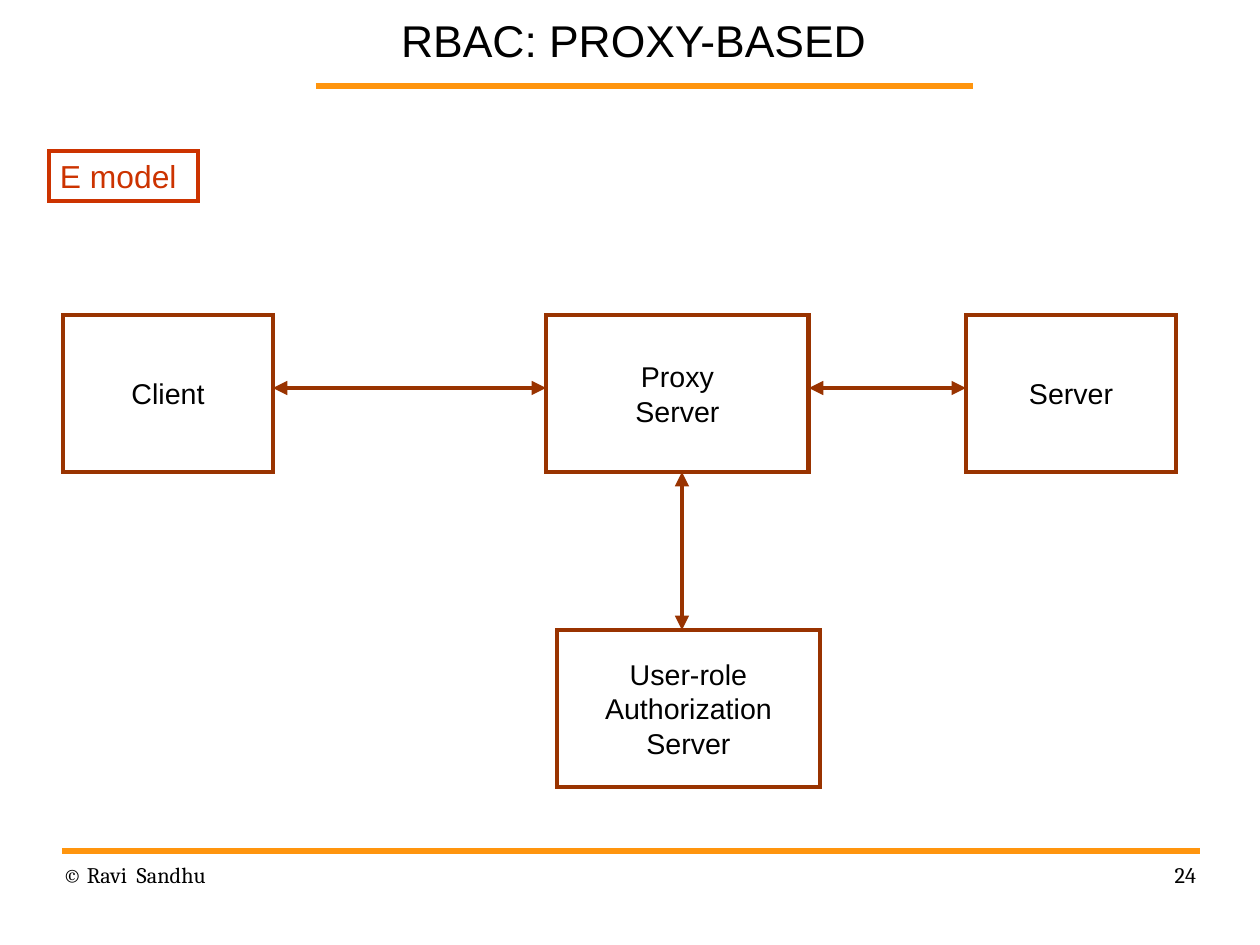
from pptx import Presentation
from pptx.dml.color import RGBColor
from pptx.enum.shapes import MSO_CONNECTOR, MSO_SHAPE
from pptx.enum.text import MSO_ANCHOR, MSO_AUTO_SIZE, PP_ALIGN
from pptx.oxml.ns import qn
from pptx.util import Emu, Pt
from lxml import etree

RECTANGLE = MSO_SHAPE.RECTANGLE
STRAIGHT = MSO_CONNECTOR.STRAIGHT
LEFT, CENTER, RIGHT = PP_ALIGN.LEFT, PP_ALIGN.CENTER, PP_ALIGN.RIGHT
TOP, MIDDLE, BOTTOM = MSO_ANCHOR.TOP, MSO_ANCHOR.MIDDLE, MSO_ANCHOR.BOTTOM
FIT_SHAPE = MSO_AUTO_SIZE.SHAPE_TO_FIT_TEXT

# Content: all lengths in px
EMU_PER_PX = 8000
SLIDE = (1260, 945)
TITLE = ("RBAC: PROXY-BASED", (350, 0, 567, 72))
RULES = [(316, 86, 973, 86), (62, 851, 1200, 851)]
FOOTERS = [
    ("© Ravi  Sandhu", (63, 861, 294, 65), LEFT),
    ("24", (902, 861, 294, 65), RIGHT),
]
MODEL_LABEL = ("E model", (49, 151, 149, 50))
NODE_HEIGHT = 157
NODES = {  # name: (lines, left, top, width)
    "client": (["Client"], 63, 315, 210),
    "proxy": (["Proxy", "Server"], 546, 315, 263),
    "server": (["Server"], 966, 315, 210),
    "authorization": (["User-role", "Authorization", "Server"], 557, 630, 263),
}
ROW_LINKS = [("client", "proxy"), ("proxy", "server")]
COLUMN_LINKS = [("proxy", "authorization")]
ROW_LINK_Y = 388
COLUMN_LINK_X = 682


class Theme:
    text = RGBColor(0x00, 0x00, 0x00)
    rule = RGBColor(0xFF, 0x95, 0x0E)
    label = RGBColor(0xCC, 0x33, 0x00)
    node = RGBColor(0x99, 0x33, 0x00)
    body_font, footer_font = "Arial", "Cambria"
    title_size, label_size, node_size, footer_size = 28, 20, 18, 14
    rule_width, outline_width = 4.31, 3


def px(length):
    return Emu(length * EMU_PER_PX)


def write(shape, lines, size, color=Theme.text, font=Theme.body_font,
          align=CENTER, anchor=MIDDLE, insets=(13, 7), wrap=True, spacing=None):
    frame = shape.text_frame
    frame.word_wrap = wrap
    frame.vertical_anchor = anchor
    frame.margin_left = frame.margin_right = px(insets[0])
    frame.margin_top = frame.margin_bottom = px(insets[1])
    for index, line in enumerate(lines):
        para = frame.add_paragraph() if index else frame.paragraphs[0]
        para.text = line
        para.alignment = align
        if spacing:
            para.line_spacing = spacing
        para.font.name = font
        para.font.size = Pt(size)
        para.font.color.rgb = color


def add_text(page, place):
    return page.shapes.add_textbox(*map(px, place))


def add_box(page, place, color):
    box = page.shapes.add_shape(RECTANGLE, *map(px, place))
    box.shadow.inherit = False
    box.fill.background()
    box.line.color.rgb = color
    box.line.width = Pt(Theme.outline_width)
    # Square corners
    etree.SubElement(box.line._get_or_add_ln(), qn("a:miter"), lim="800000")
    return box


def add_line(page, ends, color, width, arrows=False):
    line = page.shapes.add_connector(STRAIGHT, *map(px, ends))
    line.line.color.rgb = color
    line.line.width = Pt(width)
    if arrows:
        outline = line.line._get_or_add_ln()
        for end in ("a:headEnd", "a:tailEnd"):
            etree.SubElement(outline, qn(end), type="triangle")
    etree.SubElement(line._element.spPr, qn("a:effectLst"))


def main():
    deck = Presentation()
    deck.slide_width, deck.slide_height = map(px, SLIDE)
    page = deck.slides.add_slide(deck.slide_layouts[6])

    # Orange rules
    for ends in RULES:
        add_line(page, ends, Theme.rule, Theme.rule_width)

    # Title and footers
    title, place = TITLE
    write(add_text(page, place), [title], Theme.title_size,
          anchor=BOTTOM, insets=(13, 6))
    for footer, place, align in FOOTERS:
        write(add_text(page, place), [footer], Theme.footer_size,
              font=Theme.footer_font, align=align, anchor=TOP,
              insets=(0, 0), spacing=1.01)

    # Model label
    label, place = MODEL_LABEL
    box = add_box(page, place, Theme.label)
    write(box, [label], Theme.label_size, color=Theme.label,
          align=LEFT, anchor=TOP, insets=(11, 6))
    box.text_frame.auto_size = FIT_SHAPE

    # Nodes
    for lines, left, top, width in NODES.values():
        box = add_box(page, (left, top, width, NODE_HEIGHT), Theme.node)
        write(box, lines, Theme.node_size, wrap=False)

    # Two-way arrows across the gaps between nodes
    links = []
    for start, end in ROW_LINKS:
        _, left, _, width = NODES[start]
        links.append((left + width, ROW_LINK_Y, NODES[end][1], ROW_LINK_Y))
    for start, end in COLUMN_LINKS:
        bottom = NODES[start][2] + NODE_HEIGHT
        links.append((COLUMN_LINK_X, bottom, COLUMN_LINK_X, NODES[end][2]))
    for ends in links:
        add_line(page, ends, Theme.node, Theme.outline_width, arrows=True)

    deck.save("out.pptx")


if __name__ == "__main__":
    main()
